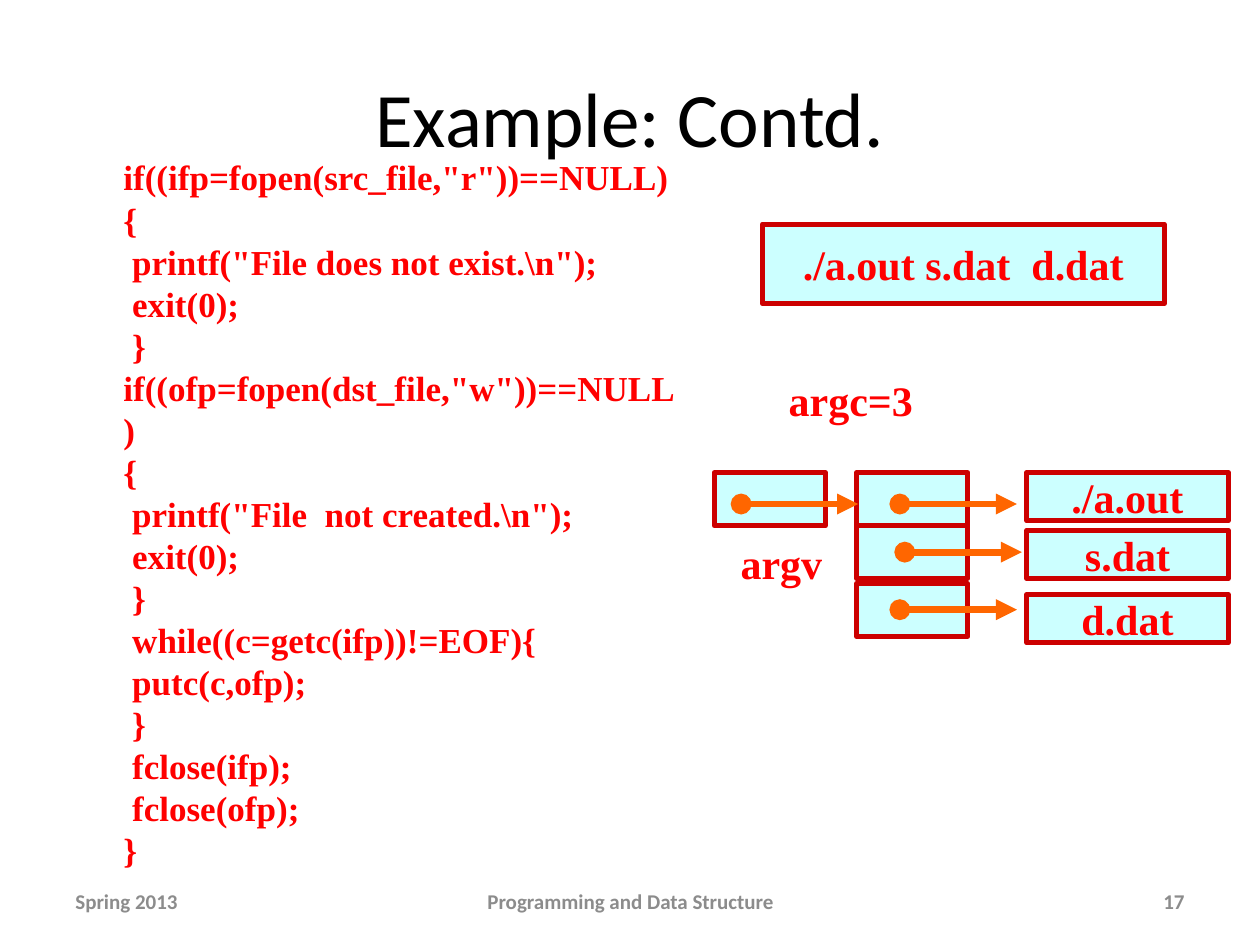
from dataclasses import dataclass

from lxml import etree
from pptx import Presentation
from pptx.dml.color import RGBColor
from pptx.enum.shapes import MSO_CONNECTOR as Connector, MSO_SHAPE as Shape
from pptx.enum.text import MSO_ANCHOR as Anchor, PP_ALIGN as Align
from pptx.oxml.ns import qn
from pptx.util import Cm, Pt


@dataclass(frozen=True)
class Theme:
    black: RGBColor = RGBColor(0x00, 0x00, 0x00)
    gray: RGBColor = RGBColor(0x8C, 0x8C, 0x8C)
    red: RGBColor = RGBColor(0xFF, 0x00, 0x00)
    border: RGBColor = RGBColor(0xCC, 0x00, 0x00)
    cell: RGBColor = RGBColor(0xCC, 0xFF, 0xFF)
    arrow: RGBColor = RGBColor(0xFF, 0x66, 0x00)
    title_size: int = 44
    label_size: int = 24
    code_size: int = 20
    footer_size: int = 12


theme = Theme()
deck = Presentation()
deck.slide_width, deck.slide_height = Cm(25.4), Cm(19.05)
page = deck.slides.add_slide(deck.slide_layouts[6])


def write(box, text, *, size=theme.label_size, color=theme.red, font="Times New Roman",
          bold=True, align=Align.LEFT, anchor=Anchor.TOP, wrap=False):
    """Fill a shape with text, one paragraph per line."""
    frame = box.text_frame
    frame.word_wrap = wrap
    frame.vertical_anchor = anchor
    frame.text = text
    for para in frame.paragraphs:
        para.alignment = align
        for span in para.runs:
            span.font.name, span.font.size, span.font.bold = font, Pt(size), bold
            span.font.color.rgb = color


def add_cell(left, top, width, height, text=""):
    box = page.shapes.add_shape(Shape.RECTANGLE, Cm(left), Cm(top), Cm(width), Cm(height))
    box.shadow.inherit = False
    box.fill.solid()
    box.fill.fore_color.rgb = theme.cell
    box.line.color.rgb = theme.border
    box.line.width = Pt(3)
    if text:
        write(box, text, align=Align.CENTER, anchor=Anchor.MIDDLE)


# Title and footer
title = page.shapes.add_textbox(Cm(1.27), Cm(0.76), Cm(22.86), Cm(3.18))
write(title, "Example: Contd.", size=theme.title_size, color=theme.black, font="Calibri",
      bold=False, align=Align.CENTER, anchor=Anchor.MIDDLE, wrap=True)

for left, width, text, align in (
    (1.27, 5.92, "Spring 2013", Align.LEFT),
    (8.69, 8.05, "Programming and Data Structure", Align.CENTER),
    (18.21, 5.92, "17", Align.RIGHT),
):
    footer = page.shapes.add_textbox(Cm(left), Cm(17.65), Cm(width), Cm(1.02))
    write(footer, text, size=theme.footer_size, color=theme.gray, font="Calibri",
          align=align, anchor=Anchor.MIDDLE, wrap=True)

# Program listing
CODE = r"""if((ifp=fopen(src_file,"r"))==NULL)
{
 printf("File does not exist.\n");
 exit(0);
 }
if((ofp=fopen(dst_file,"w"))==NULL)
{
 printf("File  not created.\n");
 exit(0);
 }
 while((c=getc(ifp))!=EOF){
 putc(c,ofp);
 }
 fclose(ifp);
 fclose(ofp);
}"""
listing = page.shapes.add_textbox(Cm(2.24), Cm(3.02), Cm(11.84), Cm(14.66))
write(listing, CODE, size=theme.code_size, wrap=True)

# Command line and its argument vector
add_cell(15.37, 4.52, 8.1, 1.6, "./a.out s.dat  d.dat")

for left, top, width, text in ((15.65, 7.42, 3.02, "argc=3"), (14.68, 10.72, 2.16, "argv")):
    label = page.shapes.add_textbox(Cm(left), Cm(top), Cm(width), Cm(1.27))
    write(label, text)

for left, top in ((14.4, 9.53), (17.27, 9.53), (17.27, 10.59), (17.27, 11.76)):
    add_cell(left, top, 2.24, 1.07)

for top, text in ((9.53, "./a.out"), (10.69, "s.dat"), (11.99, "d.dat")):
    add_cell(20.7, top, 4.06, 0.97, text)

# Pointers
for left, top in ((14.94, 10.16), (18.14, 10.16), (18.24, 11.13), (18.14, 12.29)):
    pointer = page.shapes.add_connector(
        Connector.STRAIGHT, Cm(left), Cm(top), Cm(left + 2.36), Cm(top))
    pointer.line.color.rgb = theme.arrow
    pointer.line.width = Pt(4)
    properties = pointer.line._get_or_add_ln()
    etree.SubElement(properties, qn("a:headEnd"), type="oval")
    etree.SubElement(properties, qn("a:tailEnd"), type="triangle")
    etree.SubElement(properties.getparent(), qn("a:effectLst"))

deck.save("out.pptx")
